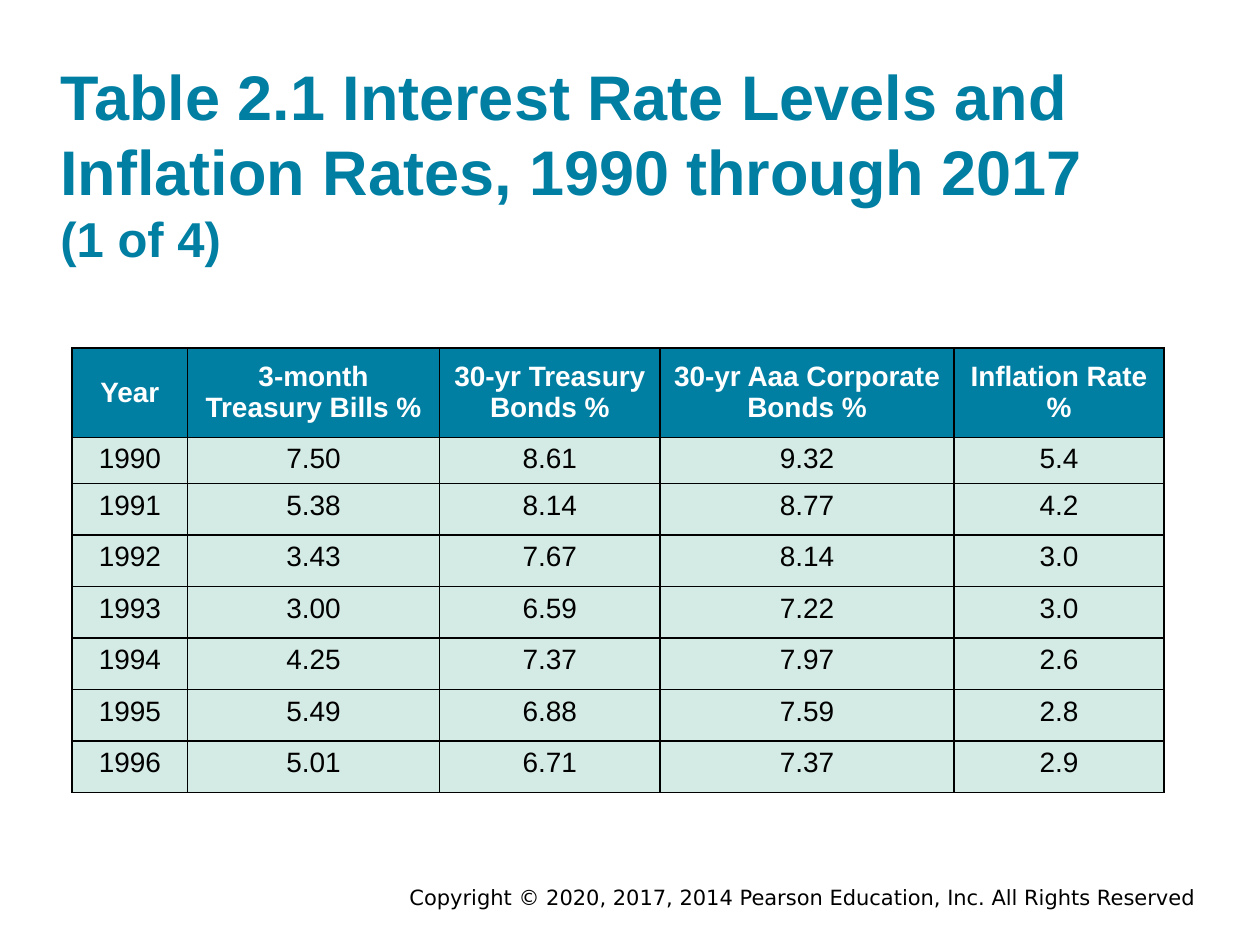
"""Build the slide of interest rate levels and inflation rates, 1990 to 1996."""
from lxml import etree
from pptx import Presentation
from pptx.dml.color import RGBColor
from pptx.enum.text import MSO_ANCHOR, PP_ALIGN
from pptx.oxml.ns import qn
from pptx.util import Pt

LEFT, CENTER, RIGHT = PP_ALIGN.LEFT, PP_ALIGN.CENTER, PP_ALIGN.RIGHT
TOP, MIDDLE, BOTTOM = MSO_ANCHOR.TOP, MSO_ANCHOR.MIDDLE, MSO_ANCHOR.BOTTOM

TEAL, MINT, WHITE, BLACK = "007FA3", "D4EAE4", "FFFFFF", "000000"

TITLE = "Table 2.1 Interest Rate Levels and Inflation Rates, 1990 through 2017 "
PART = "(1 of 4)"
COPYRIGHT = "Copyright © 2020, 2017, 2014 Pearson Education, Inc. All Rights Reserved"
RATES = [
    ("Year", "3-month Treasury Bills %", "30-yr Treasury Bonds %",
     "30-yr Aaa Corporate Bonds %", "Inflation Rate %"),
    ("1990", "7.50", "8.61", "9.32", "5.4"),
    ("1991", "5.38", "8.14", "8.77", "4.2"),
    ("1992", "3.43", "7.67", "8.14", "3.0"),
    ("1993", "3.00", "6.59", "7.22", "3.0"),
    ("1994", "4.25", "7.37", "7.97", "2.6"),
    ("1995", "5.49", "6.88", "7.59", "2.8"),
    ("1996", "5.01", "6.71", "7.37", "2.9"),
]
COLUMN_WIDTHS = [66, 144, 126, 168, 120]
ROW_HEIGHTS = [51, 26.4] + [29.45] * 6


def color(hex_code):
    return RGBColor.from_string(hex_code)


def write(paragraph, text, size=16, ink=BLACK, bold=False, font="Arial", align=LEFT):
    paragraph.alignment = align
    run = paragraph.add_run()
    run.text = text
    run.font.size = Pt(size)
    run.font.name = font
    run.font.bold = bold
    run.font.color.rgb = color(ink)


def add_borders(cell, width=1):
    properties = cell._tc.get_or_add_tcPr()
    for index, side in enumerate(("a:lnL", "a:lnR", "a:lnT", "a:lnB")):
        line = etree.Element(qn(side), w=str(Pt(width)))
        fill = etree.SubElement(line, qn("a:solidFill"))
        etree.SubElement(fill, qn("a:srgbClr"), val=BLACK)
        properties.insert(index, line)


def add_title(slide):
    title = slide.shapes.title
    title.left, title.top, title.width, title.height = Pt(34.56), Pt(31.68), Pt(613.44), Pt(120.96)
    frame = title.text_frame
    frame.word_wrap = True
    frame.vertical_anchor = BOTTOM
    frame.margin_left = frame.margin_right = frame.margin_top = frame.margin_bottom = 0
    heading = frame.paragraphs[0]
    write(heading, TITLE, size=36, ink=TEAL, bold=True)
    write(heading, PART, size=28, ink=TEAL, bold=True)


def add_rates(slide):
    table = slide.shapes.add_table(
        len(RATES), len(COLUMN_WIDTHS), Pt(41.2), Pt(198.9),
        Pt(sum(COLUMN_WIDTHS)), Pt(sum(ROW_HEIGHTS))).table
    for column, width in zip(table.columns, COLUMN_WIDTHS):
        column.width = Pt(width)
    for row_index, (row, height, values) in enumerate(zip(table.rows, ROW_HEIGHTS, RATES)):
        row.height = Pt(height)
        header = row_index == 0
        for cell, value in zip(row.cells, values):
            cell.fill.solid()
            cell.fill.fore_color.rgb = color(TEAL if header else MINT)
            cell.vertical_anchor = MIDDLE if header else TOP
            add_borders(cell)
            write(cell.text_frame.paragraphs[0], value, bold=header,
                  ink=WHITE if header else BLACK, align=CENTER)


def add_copyright(slide):
    frame = slide.shapes.add_textbox(Pt(126.72), Pt(501.84), Pt(563.76), Pt(21.6)).text_frame
    frame.word_wrap = True
    write(frame.paragraphs[0], COPYRIGHT, size=12, font="DejaVu Sans", align=RIGHT)


def main():
    presentation = Presentation()
    presentation.slide_width, presentation.slide_height = Pt(720), Pt(540)
    slide = presentation.slides.add_slide(presentation.slide_layouts[5])
    add_copyright(slide)
    add_title(slide)
    add_rates(slide)
    presentation.save("out.pptx")


if __name__ == "__main__":
    main()
